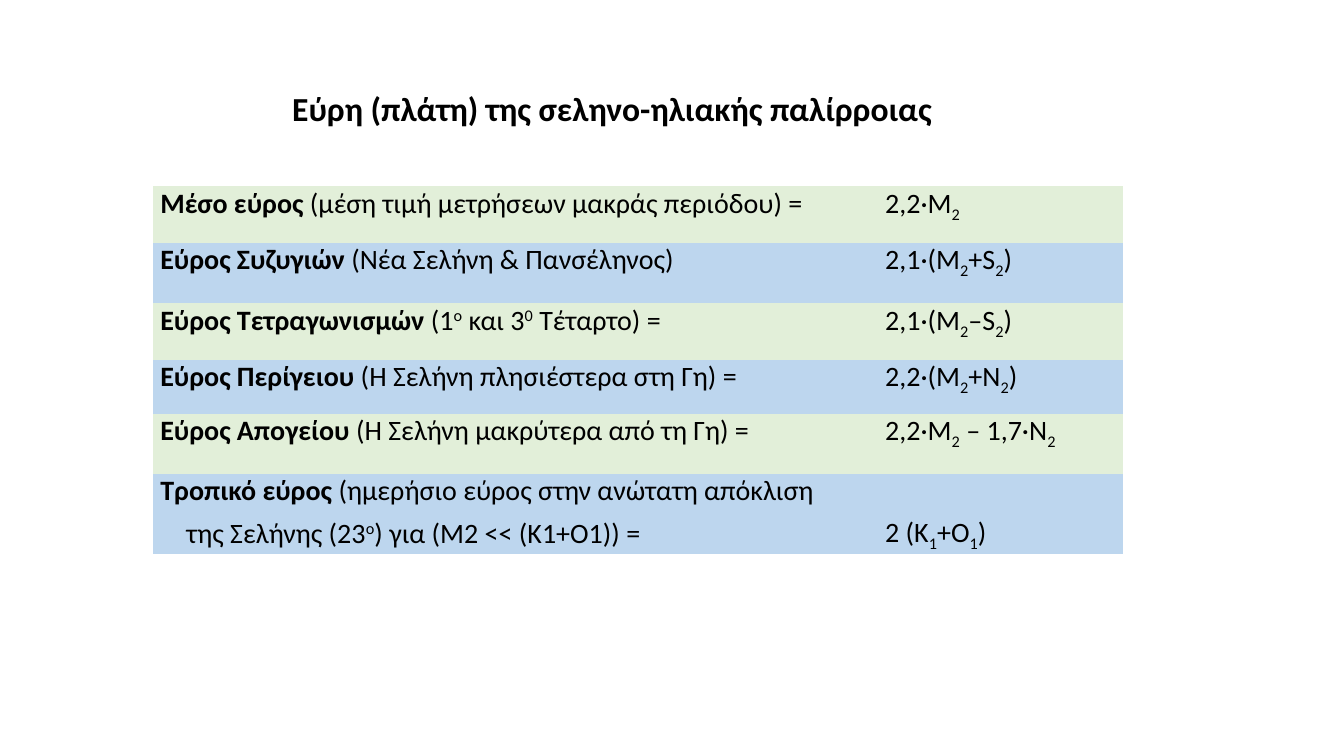
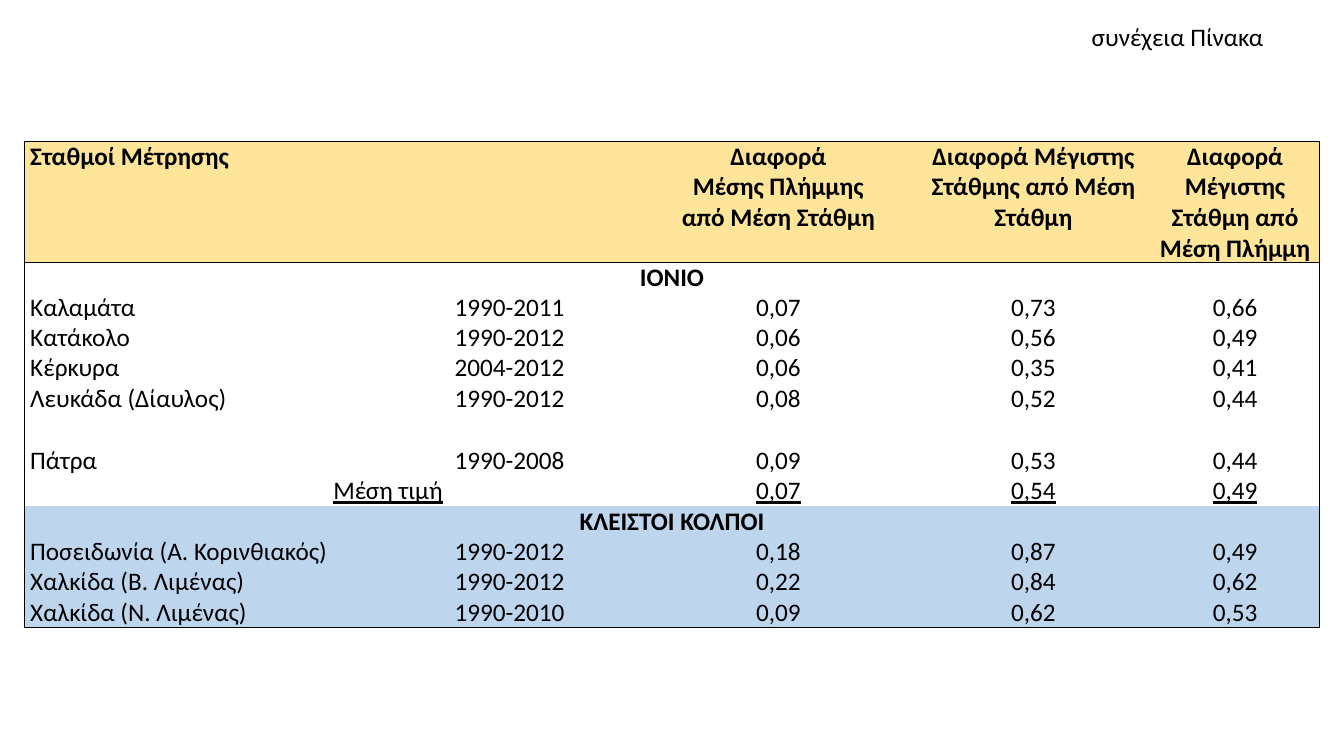
from dataclasses import dataclass

from lxml import etree
from pptx import Presentation
from pptx.dml.color import RGBColor
from pptx.enum import text as t
from pptx.oxml.ns import qn
from pptx.util import Inches, Pt


@dataclass(frozen=True)
class Theme:
    font: str = "Calibri"
    ink: str = "000000"
    paper: str = "FFFFFF"
    green: str = "E2EFD9"
    blue: str = "BDD6EE"
    yellow: str = "FFE599"
    title: int = 24
    amplitude: int = 20
    station: int = 18
    border: int = 1


THEME = Theme()
PLAIN_TABLE = "{2D5ABB26-0587-4C30-8999-92F81FD0307C}"
BASELINES = {"_": "-25000", "^": "30000"}
LEFT, CENTER, RIGHT = t.PP_ALIGN.LEFT, t.PP_ALIGN.CENTER, t.PP_ALIGN.RIGHT
TOP, MIDDLE, BOTTOM = t.MSO_ANCHOR.TOP, t.MSO_ANCHOR.MIDDLE, t.MSO_ANCHOR.BOTTOM

AMPLITUDES = [
    (0.56, "*Μέσο εύρος| (μέση τιμή μετρήσεων μακράς περιόδου) =", "2,2·M|_2"),
    (0.6, "*Εύρος Συζυγιών| (Νέα Σελήνη & Πανσέληνος)", "2,1·(M|_2|+S|_2|)"),
    (0.56, "*Εύρος Τετραγωνισμών| (1|^ο| και 3|^0| Τέταρτο) =", "2,1·(M|_2|–S|_2|)"),
    (0.54, "*Εύρος Περίγειου| (Η Σελήνη πλησιέστερα στη Γη) =", "2,2·(M|_2|+N|_2|)"),
    (0.59, "*Εύρος Απογείου| (Η Σελήνη μακρύτερα από τη Γη) =", "2,2·M|_2| – 1,7·N|_2"),
    (0.8, "*Τροπικό εύρος| (ημερήσιο εύρος στην ανώτατη απόκλιση\n"
          "της Σελήνης (23|^ο|) για (M2 << (K1+O1)) =", "2 (K|_1|+O|_1|)"),
]

STATION_HEADINGS = [
    "Σταθμοί Μέτρησης", "",
    "Διαφορά\nΜέσης Πλήμμης\nαπό Μέση Στάθμη",
    "Διαφορά Μέγιστης Στάθμης από Μέση Στάθμη",
    "Διαφορά Μέγιστης Στάθμη από Μέση Πλήμμη",
]
MEAN = "Μέση τιμή"
REGIONS = [
    ("ΙΟΝΙΟ", None, [
        ("Καλαμάτα", "1990-2011", "0,07", "0,73", "0,66"),
        ("Κατάκολο", "1990-2012", "0,06", "0,56", "0,49"),
        ("Κέρκυρα", "2004-2012", "0,06", "0,35", "0,41"),
        ("Λευκάδα (Δίαυλος)", "1990-2012", "0,08", "0,52", "0,44"),
        ("Πάτρα", "1990-2008", "0,09", "0,53", "0,44"),
        (MEAN, "", "0,07", "0,54", "0,49"),
    ]),
    ("ΚΛΕΙΣΤΟΙ ΚΟΛΠΟΙ", THEME.blue, [
        ("Ποσειδωνία (Α. Κορινθιακός)", "1990-2012", "0,18", "0,87", "0,49"),
        ("Χαλκίδα (Β. Λιμένας)", "1990-2012", "0,22", "0,84", "0,62"),
        ("Χαλκίδα (Ν. Λιμένας)", "1990-2010", "0,09", "0,62", "0,53"),
    ]),
]
STATION_COLUMNS = [4.21, 1.9, 2.74, 2.32, 1.68]
STATION_ROW, TALL_ROW = 0.3, 0.62
TALL_STATION = "Λευκάδα (Δίαυλος)"


def write(frame, content, *, size, bold=False, underline=None, align=LEFT,
          gap=0, indent=0, line_spacing=None):
    """Lines split at newlines, runs at |; a run may start with * bold, _ sub or ^ super."""
    for number, line in enumerate(content.split("\n")):
        paragraph = frame.paragraphs[0] if number == 0 else frame.add_paragraph()
        paragraph.alignment = align
        paragraph.line_spacing = line_spacing
        if number:
            paragraph.space_before = Pt(gap)
            if indent:
                paragraph._p.get_or_add_pPr().set("indent", str(Inches(indent)))
        paragraph.font.size = Pt(size)
        paragraph.font.name = THEME.font
        for part in filter(None, line.split("|")):
            mark = part[0] if part[0] in "*_^" else ""
            run = paragraph.add_run()
            run.text = part[len(mark):]
            run.font.size = Pt(size)
            run.font.name = THEME.font
            run.font.bold = bold or mark == "*"
            run.font.underline = underline
            run.font.color.rgb = RGBColor.from_string(THEME.ink)
            if mark in BASELINES:
                run.font._element.set("baseline", BASELINES[mark])


def add_text(slide, content, left, top, width, height, *, anchor=TOP, wrap=True, **style):
    frame = slide.shapes.add_textbox(*map(Inches, (left, top, width, height))).text_frame
    frame.word_wrap = wrap
    frame.vertical_anchor = anchor
    write(frame, content, **style)


def add_plain_table(slide, left, top, columns, rows):
    holder = slide.shapes.add_table(
        len(rows), len(columns), *map(Inches, (left, top, sum(columns), sum(rows))))
    next(holder.element.iter(qn("a:tableStyleId"))).text = PLAIN_TABLE
    table = holder.table
    table.first_row = table.horz_banding = False
    for column, width in zip(table.columns, columns):
        column.width = Inches(width)
    for row, height in zip(table.rows, rows):
        row.height = Inches(height)
    return table


def add_border(cell, side):
    line = etree.SubElement(cell._tc.get_or_add_tcPr(), qn(f"a:ln{side}"),
                            w=str(Pt(THEME.border)))
    fill = etree.SubElement(line, qn("a:solidFill"))
    etree.SubElement(fill, qn("a:srgbClr"), val=THEME.ink)


def fill_cell(cell, content, *, inset, fill=None, borders="", anchor=TOP, **style):
    """Borders is a string of sides, in the order L, R, T, B."""
    cell.margin_left = cell.margin_right = Inches(inset)
    cell.margin_top = cell.margin_bottom = 0
    cell.vertical_anchor = anchor
    for side in borders:
        add_border(cell, side)
    if fill:
        cell.fill.solid()
        cell.fill.fore_color.rgb = RGBColor.from_string(fill)
    else:
        cell.fill.background()
    write(cell.text_frame, content, **style)


def outer_sides(column):
    return {0: "L", len(STATION_COLUMNS) - 1: "R"}.get(column, "")


def add_slide(deck):
    slide = deck.slides.add_slide(deck.slide_layouts[6])
    slide.background.fill.solid()
    slide.background.fill.fore_color.rgb = RGBColor.from_string(THEME.paper)
    return slide


def build_amplitudes(deck):
    slide = add_slide(deck)
    add_text(slide, "Εύρη (πλάτη) της σεληνο-ηλιακής παλίρροιας", 2.8, 0.7, 7.2, 0.8,
             anchor=MIDDLE, size=THEME.title, bold=True, line_spacing=0.9)
    table = add_plain_table(slide, 1.52, 1.85, [7.19, 2.43], [row[0] for row in AMPLITUDES])
    for index, (_, meaning, formula) in enumerate(AMPLITUDES):
        look = dict(inset=0.07, size=THEME.amplitude,
                    fill=THEME.blue if index % 2 else THEME.green)
        fill_cell(table.cell(index, 0), meaning, gap=6, indent=0.26, **look)
        fill_cell(table.cell(index, 1), formula,
                  anchor=BOTTOM if "\n" in meaning else TOP, **look)


def add_station_headings(slide):
    table = add_plain_table(slide, 0.24, 1.4, STATION_COLUMNS, [1.2])
    for column, heading in enumerate(STATION_HEADINGS):
        fill_cell(table.cell(0, column), heading, inset=0.06, size=THEME.station, bold=True,
                  align=CENTER if column > 1 else LEFT, fill=THEME.yellow,
                  borders=outer_sides(column) + "TB")


def add_region_title(table, row, name, look):
    title = table.cell(row, 0)
    title.merge(table.cell(row, len(STATION_COLUMNS) - 1))
    fill_cell(title, name, bold=True, align=CENTER, borders="LR", **look)


def add_station(table, row, values, look):
    is_mean = values[0] == MEAN
    bottom = "B" if row == len(table.rows) - 1 else ""
    for column, value in enumerate(values):
        is_level = column > 1
        align = CENTER if is_level else RIGHT if is_mean else LEFT
        fill_cell(table.cell(row, column), value, align=align, underline=is_mean,
                  anchor=BOTTOM if is_mean and is_level else TOP,
                  borders=outer_sides(column) + bottom, **look)


def build_stations(deck):
    slide = add_slide(deck)
    heights = []
    for _, _, stations in REGIONS:
        heights.append(STATION_ROW)
        heights += [TALL_ROW if station[0] == TALL_STATION else STATION_ROW
                    for station in stations]
    table = add_plain_table(slide, 0.24, 2.6, STATION_COLUMNS, heights)
    row = 0
    for name, fill, stations in REGIONS:
        look = dict(inset=0.06, size=THEME.station, fill=fill)
        add_region_title(table, row, name, look)
        for row, station in enumerate(stations, row + 1):
            add_station(table, row, station, look)
        row += 1
    add_station_headings(slide)
    add_text(slide, "συνέχεια Πίνακα", 10.73, 0.16, 1.93, 0.4, wrap=False, size=THEME.station)


def main():
    deck = Presentation()
    deck.slide_width, deck.slide_height = Inches(13.33), Inches(7.5)
    build_amplitudes(deck)
    build_stations(deck)
    deck.save("out.pptx")


if __name__ == "__main__":
    main()
